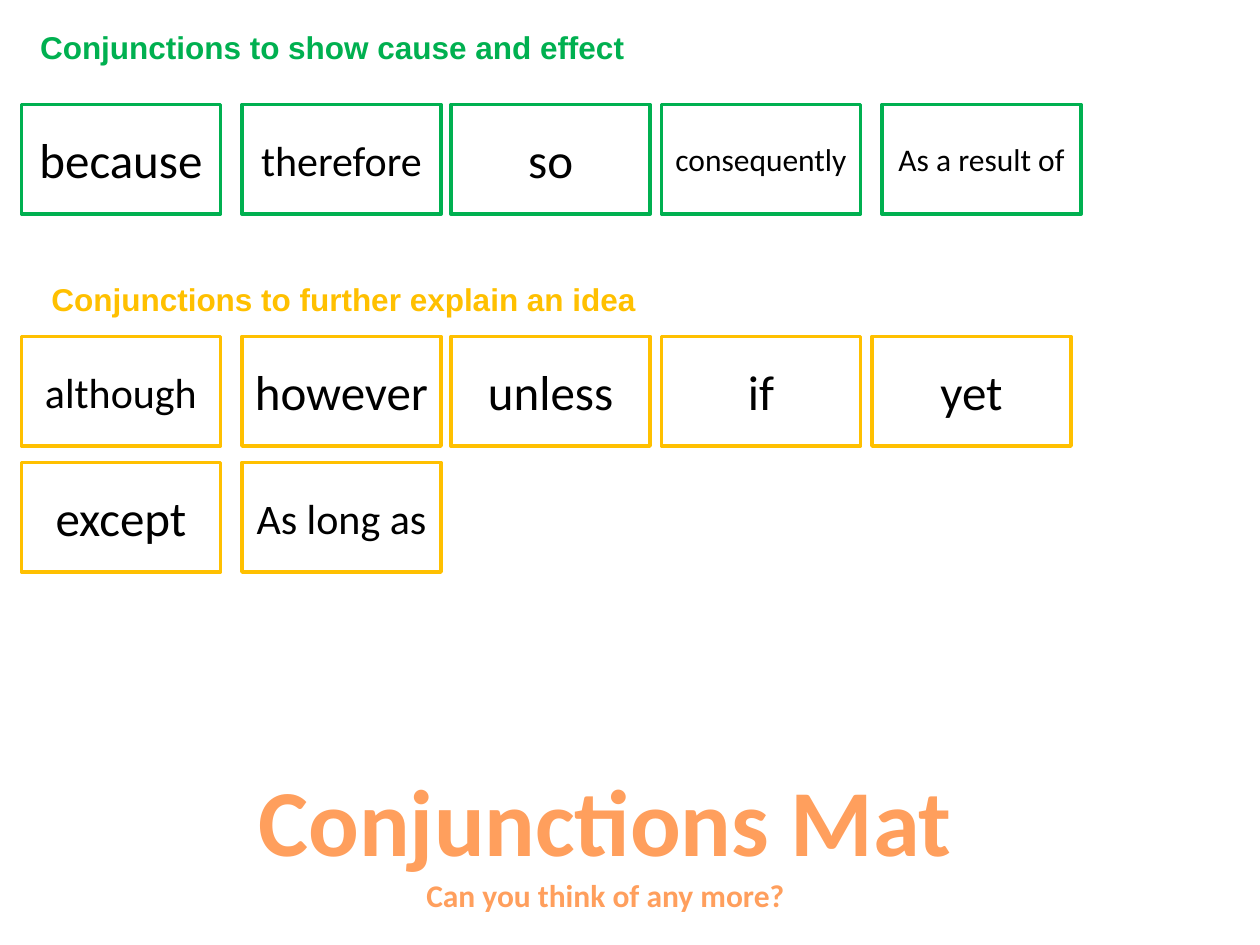
from dataclasses import dataclass

from pptx import Presentation
from pptx.dml.color import RGBColor
from pptx.enum.shapes import MSO_SHAPE
from pptx.enum.text import MSO_ANCHOR, MSO_AUTO_SIZE, PP_ALIGN
from pptx.util import Inches, Pt


@dataclass(frozen=True)
class Theme:
    green: RGBColor = RGBColor(0x00, 0xB0, 0x50)
    amber: RGBColor = RGBColor(0xFF, 0xC0, 0x00)
    orange: RGBColor = RGBColor(0xFF, 0x9F, 0x5D)
    black: RGBColor = RGBColor(0x00, 0x00, 0x00)
    white: RGBColor = RGBColor(0xFF, 0xFF, 0xFF)
    heading_font: str = "Arial"
    body_font: str = "Calibri"
    title: int = 54
    large: int = 28
    medium: int = 24
    small: int = 18


THEME = Theme()
COLUMNS = (0.17, 1.92, 3.58, 5.25, 6.92)
CAUSE_COLUMNS = COLUMNS[:4] + (7,)
CARD_WIDTH, CARD_HEIGHT = 1.58, 0.87

CAUSE_ROW = (
    ("because", THEME.large),
    ("therefore", THEME.medium),
    ("so", THEME.large),
    ("consequently", THEME.small),
    ("As a result of", THEME.small),
)
EXPLAIN_ROW = (
    ("although", THEME.medium),
    ("however", THEME.large),
    ("unless", THEME.large),
    ("if", THEME.large),
    ("yet", THEME.large),
)
EXTRA_ROW = (("except", THEME.large), ("As long as", THEME.medium))


def set_values(target, values):
    for name, value in values.items():
        setattr(target, name, value)


def write(para, text, size, color, font=THEME.body_font, bold=False,
          align=PP_ALIGN.CENTER):
    para.alignment = align
    span = para.add_run()
    span.text = text
    set_values(span.font, {"name": font, "size": Pt(size), "bold": bold})
    span.font.color.rgb = color


def add_heading(page, text, left, top, width, color):
    box = page.shapes.add_textbox(
        Inches(left), Inches(top), Inches(width), Inches(0.4))
    box.text_frame.word_wrap = True
    para = box.text_frame.paragraphs[0]
    write(para, text, THEME.small, color, THEME.heading_font, True,
          PP_ALIGN.LEFT)
    properties = para._p.get_or_add_pPr()
    properties.set("marL", "0")
    properties.set("indent", str(Inches(0.89)))


def add_card(page, word, size, left, top, color):
    card = page.shapes.add_shape(
        MSO_SHAPE.RECTANGLE, Inches(left), Inches(top),
        Inches(CARD_WIDTH), Inches(CARD_HEIGHT))
    card.shadow.inherit = False
    card.fill.solid()
    card.fill.fore_color.rgb = THEME.white
    card.line.color.rgb = color
    card.line.width = Pt(2)
    set_values(card.text_frame, {
        "word_wrap": True, "vertical_anchor": MSO_ANCHOR.MIDDLE})
    write(card.text_frame.paragraphs[0], word, size, THEME.black)


def add_card_row(page, cards, top, color, columns=COLUMNS):
    for (word, size), left in zip(cards, columns):
        add_card(page, word, size, left, top, color)


def fill_title(page):
    title = page.shapes.title
    set_values(title, {"left": Inches(1.92), "top": Inches(6),
                       "width": Inches(5.77), "height": Inches(1.35)})
    frame = title.text_frame
    set_values(frame, {"word_wrap": True, "vertical_anchor": MSO_ANCHOR.TOP,
                       "auto_size": MSO_AUTO_SIZE.NONE})
    write(frame.paragraphs[0], "Conjunctions Mat", THEME.title, THEME.orange,
          bold=True)
    write(frame.add_paragraph(), "Can you think of any more?", THEME.small,
          THEME.orange, bold=True)


def main():
    deck = Presentation()
    set_values(deck, {"slide_width": Inches(10), "slide_height": Inches(7.5)})
    page = deck.slides.add_slide(deck.slide_layouts[5])

    add_heading(page, "Conjunctions to show cause and effect",
                -0.67, 0.17, 5.93, THEME.green)
    add_card_row(page, CAUSE_ROW, 0.83, THEME.green, CAUSE_COLUMNS)

    add_heading(page, "Conjunctions to further explain an idea",
                -0.58, 2.17, 8.75, THEME.amber)
    add_card_row(page, EXPLAIN_ROW, 2.67, THEME.amber)
    add_card_row(page, EXTRA_ROW, 3.67, THEME.amber)

    fill_title(page)
    deck.save("out.pptx")


if __name__ == "__main__":
    main()
